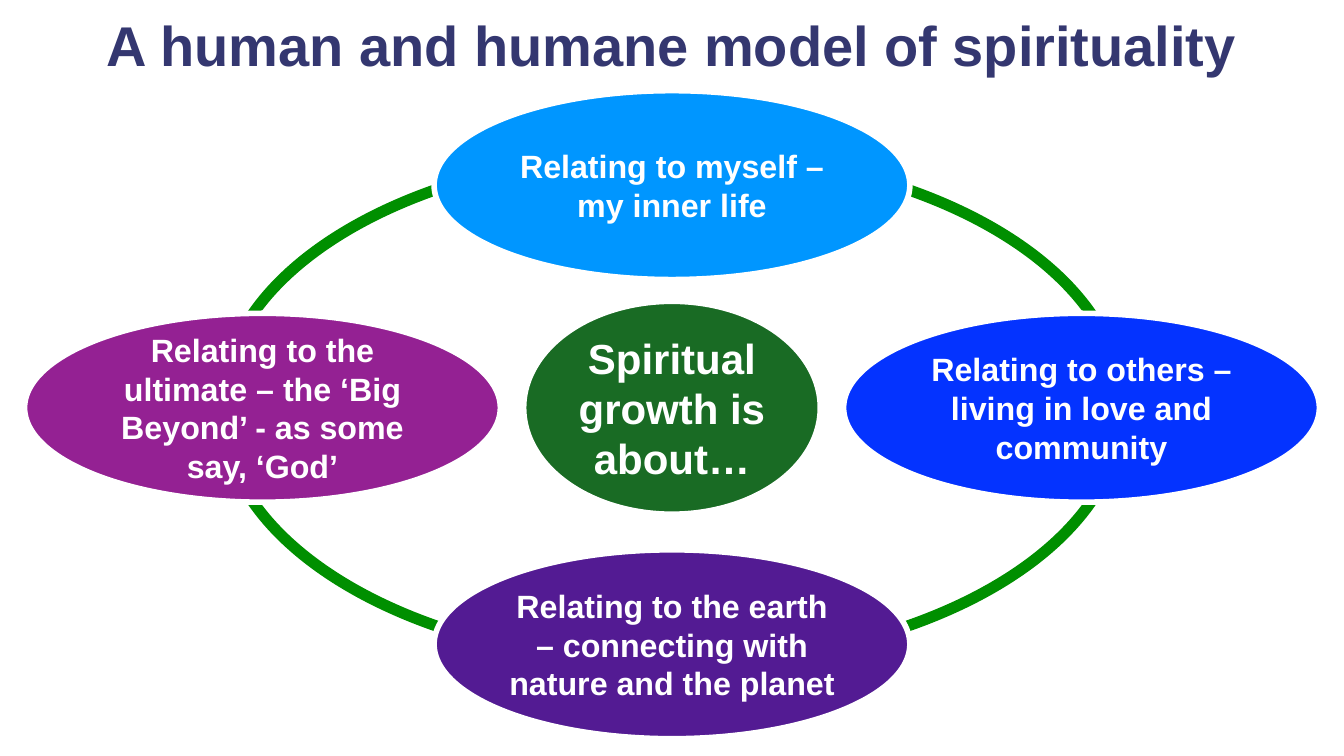
from pptx import Presentation
from pptx.dml.color import RGBColor
from pptx.enum.shapes import MSO_SHAPE
from pptx.enum.text import MSO_ANCHOR, PP_ALIGN
from pptx.util import Cm, Pt

OVAL = MSO_SHAPE.OVAL
MIDDLE = MSO_ANCHOR.MIDDLE
CENTER = PP_ALIGN.CENTER

THEME = {
    "font": "Arial",
    "title": "343770", "core": "196B24", "ring": "008F00", "white": "FFFFFF",
    "ultimate": "942193", "others": "0433FF", "earth": "531B93", "myself": "0096FF",
    "title_size": 80, "core_size": 60, "relation_size": 46,
}

SLIDE_W, SLIDE_H = 67.74, 38.1
MID_X, MID_Y = SLIDE_W / 2, 20.55

prs = Presentation()
prs.slide_width, prs.slide_height = Cm(SLIDE_W), Cm(SLIDE_H)
slide = prs.slides.add_slide(prs.slide_layouts[6])


def write(shape, text, size, color, inset=0.25):
    frame = shape.text_frame
    frame_format = {"word_wrap": True, "vertical_anchor": MIDDLE}
    for side in ("left", "right", "top", "bottom"):
        frame_format[f"margin_{side}"] = Cm(inset)
    for name, value in frame_format.items():
        setattr(frame, name, value)
    paragraph = frame.paragraphs[0]
    paragraph.alignment = CENTER
    run = paragraph.add_run()
    run.text = text
    for name, value in {"name": THEME["font"], "size": Pt(size), "bold": True}.items():
        setattr(run.font, name, value)
    run.font.color.rgb = RGBColor.from_string(THEME[color])


def add_oval(center_x, center_y, width, height, fill, line, line_width):
    oval = slide.shapes.add_shape(
        OVAL, Cm(center_x - width / 2), Cm(center_y - height / 2), Cm(width), Cm(height))
    oval.shadow.inherit = False
    if fill:
        oval.fill.solid()
        oval.fill.fore_color.rgb = RGBColor.from_string(THEME[fill])
    else:
        oval.fill.background()
    oval.line.color.rgb = RGBColor.from_string(THEME[line])
    oval.line.width = Pt(line_width)
    return oval


# Title
title = slide.shapes.add_textbox(Cm(1.5), Cm(0), Cm(64.74), Cm(4.88))
write(title, "A human and humane model of spirituality", THEME["title_size"], "title")
title.text_frame.paragraphs[0].line_spacing = 0.9

# Core statement and the ring around it
core = add_oval(MID_X, MID_Y, 14.81, 10.59, "core", "white", 4)
write(core, "Spiritual growth is about…", THEME["core_size"], "white")
add_oval(MID_X, MID_Y, 45.42, 25.81, None, "ring", 16)

# Four relations on the ring: colour, offset from the middle, inset, text
relations = [
    ("ultimate", -20.64, 0, 0.28,
     "Relating to the ultimate – the ‘Big Beyond’ - as some say, ‘God’"),
    ("others", 20.64, 0, 0.28, "Relating to others – living in love and community"),
    ("earth", 0, 11.92, 0.25,
     "Relating to the earth – connecting with nature and the planet"),
    ("myself", 0, -11.22, 0.25, "Relating to myself – my inner life"),
]
for color, dx, dy, inset, text in relations:
    relation = add_oval(MID_X + dx, MID_Y + dy, 23.98, 9.52, color, "white", 8)
    write(relation, text, THEME["relation_size"], "white", inset)

prs.save("out.pptx")
